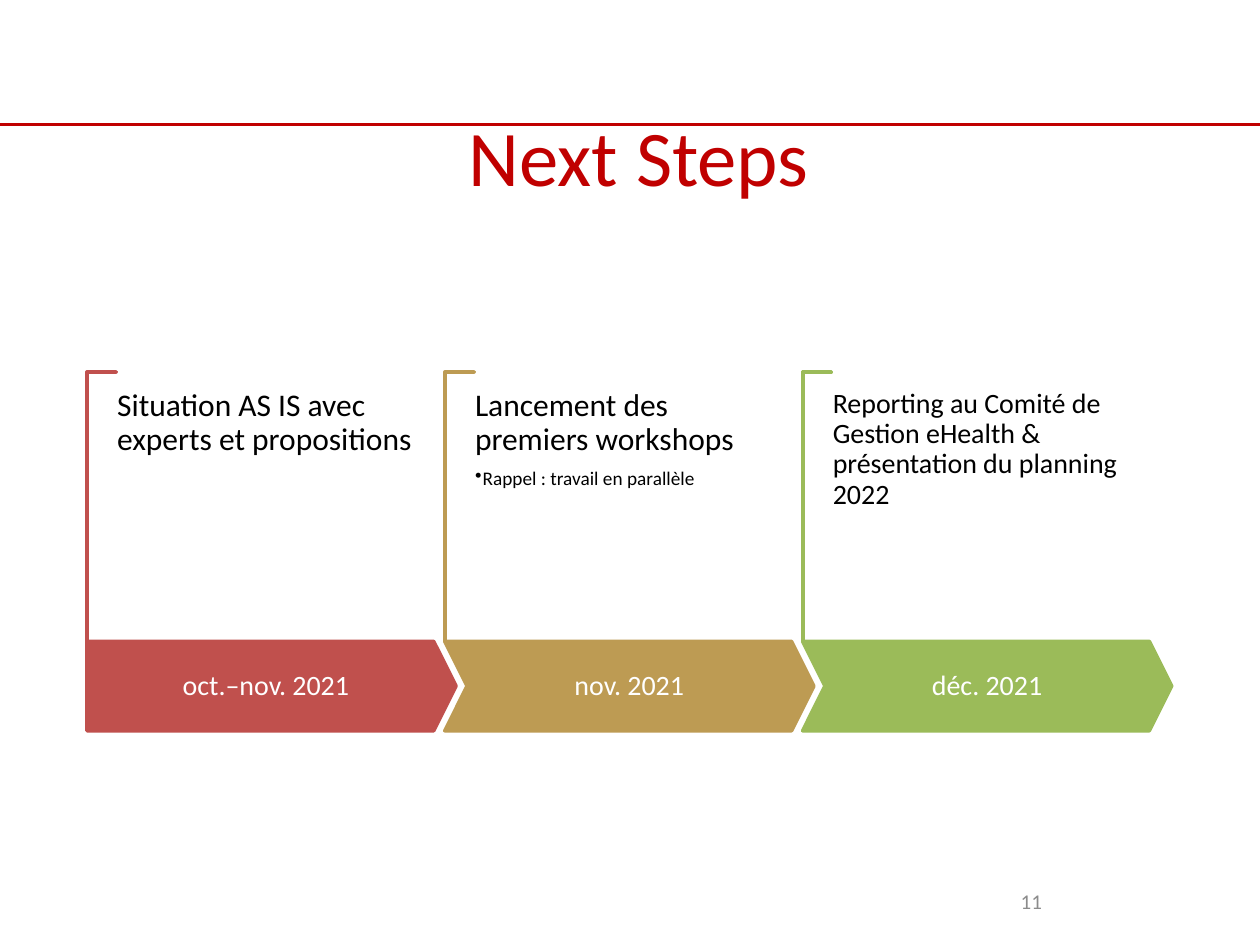
from dataclasses import dataclass

from lxml import etree
from pptx import Presentation
from pptx.dml.color import RGBColor
from pptx.enum import shapes, text
from pptx.oxml import ns
from pptx.util import Inches, Pt


@dataclass(frozen=True)
class Theme:
    font: str = "Calibri"
    accent: str = "C00000"
    body: str = "000000"
    light: str = "FFFFFF"
    muted: str = "8C8C8C"
    title_size: int = 45
    label_size: int = 16
    bullet_size: int = 11
    number_size: int = 12


THEME = Theme()

# Content
TITLE = "Next Steps"
PAGE_NUMBER = "11"
STEPS = [
    dict(date="oct.–nov. 2021", color="C0504D", size=18,
         heading="Situation AS IS avec experts et propositions", bullets=[]),
    dict(date="nov. 2021", color="BD9B53", size=18,
         heading="Lancement des premiers workshops",
         bullets=["Rappel : travail en parallèle"]),
    dict(date="déc. 2021", color="9BBB59", size=16,
         heading="Reporting au Comité de Gestion eHealth & présentation du planning 2022",
         bullets=[]),
]

# Timeline geometry in inches
LEFT, PITCH = 0.69, 2.84
ARROW_TOP, ARROW_WIDTH, ARROW_HEIGHT = 5.09, 2.93, 0.71
BRACKET_TOP, BRACKET_LENGTH, BRACKET_DEPTH = 2.95, 2.14, 0.23
TEXT_OFFSET, TEXT_TOP, TEXT_WIDTH, TEXT_HEIGHT = 0.24, 3.09, 2.38, 1.59


def rgb(color):
    return RGBColor.from_string(color)


def style(paragraph, size, color, align=text.PP_ALIGN.LEFT):
    paragraph.alignment = align
    paragraph.font.name = THEME.font
    paragraph.font.size = Pt(size)
    paragraph.font.color.rgb = rgb(color)


def set_insets(frame, horizontal, vertical):
    frame.margin_left = frame.margin_right = Inches(horizontal)
    frame.margin_top = frame.margin_bottom = Inches(vertical)


def add_text(slide, box, words, size, color, align=text.PP_ALIGN.CENTER,
             anchor=text.MSO_ANCHOR.MIDDLE):
    frame = slide.shapes.add_textbox(*map(Inches, box)).text_frame
    frame.word_wrap = True
    frame.vertical_anchor = anchor
    frame.text = words
    style(frame.paragraphs[0], size, color, align)
    return frame


def add_shape(slide, kind, box, fill, line, adjustments):
    shape = slide.shapes.add_shape(kind, *map(Inches, box))
    shape.shadow.inherit = False
    shape.fill.solid()
    shape.fill.fore_color.rgb = rgb(fill)
    shape.line.color.rgb = rgb(line)
    shape.line.width = Pt(2)
    for index, value in enumerate(adjustments):
        shape.adjustments[index] = value
    return shape


def add_bullet(frame, words):
    paragraph = frame.add_paragraph()
    paragraph.text = words
    properties = paragraph._p.get_or_add_pPr()
    properties.set("marL", str(Inches(0.06)))
    properties.set("indent", str(Inches(-0.06)))
    etree.SubElement(properties, ns.qn("a:buChar")).set("char", "•")
    style(paragraph, THEME.bullet_size, THEME.body)
    paragraph.line_spacing = 0.9


def add_step(slide, index, step):
    left = LEFT + index * PITCH

    # Bracket: an L turned a quarter about its centre
    center_x = left + BRACKET_DEPTH / 2
    center_y = BRACKET_TOP + BRACKET_LENGTH / 2
    bracket = add_shape(
        slide, shapes.MSO_SHAPE.CORNER,
        (center_x - BRACKET_LENGTH / 2, center_y - BRACKET_DEPTH / 2,
         BRACKET_LENGTH, BRACKET_DEPTH),
        THEME.light, step["color"], (0.01, 0.01))
    bracket.rotation = 90

    # Date arrow
    kind = shapes.MSO_SHAPE.CHEVRON if index else shapes.MSO_SHAPE.PENTAGON
    arrow = add_shape(slide, kind, (left, ARROW_TOP, ARROW_WIDTH, ARROW_HEIGHT),
                      step["color"], step["color"], (0.25,))
    frame = arrow.text_frame
    frame.word_wrap = True
    frame.vertical_anchor = text.MSO_ANCHOR.MIDDLE
    set_insets(frame, 0.11, 0.22)
    frame.text = step["date"]
    label = frame.paragraphs[0]
    style(label, THEME.label_size, THEME.light, text.PP_ALIGN.CENTER)
    label.line_spacing = 0.9

    # Description
    frame = add_text(slide, (left + TEXT_OFFSET, TEXT_TOP, TEXT_WIDTH, TEXT_HEIGHT),
                     step["heading"], step["size"], THEME.body,
                     text.PP_ALIGN.LEFT, text.MSO_ANCHOR.TOP)
    set_insets(frame, 0, 0)
    heading = frame.paragraphs[0]
    heading.line_spacing = 0.9
    heading.space_after = Pt(0.35 * step["size"])
    for words in step["bullets"]:
        add_bullet(frame, words)


def main():
    presentation = Presentation()
    presentation.slide_width, presentation.slide_height = Inches(10), Inches(7.5)
    slide = presentation.slides.add_slide(presentation.slide_layouts[6])

    # Header rule
    rule = slide.shapes.add_connector(shapes.MSO_CONNECTOR.STRAIGHT, Inches(0),
                                      Inches(0.99), Inches(10), Inches(0.99))
    rule.line.color.rgb = rgb(THEME.accent)
    rule.line.width = Pt(1.5)
    etree.SubElement(rule._element.spPr, ns.qn("a:effectLst"))

    # Title and page number
    add_text(slide, (0.76, 0.61, 8.62, 1.24), TITLE, THEME.title_size, THEME.accent)
    add_text(slide, (7.06, 6.95, 2.25, 0.4), PAGE_NUMBER, THEME.number_size, THEME.muted)

    # Timeline
    for index, step in enumerate(STEPS):
        add_step(slide, index, step)

    presentation.save("out.pptx")


if __name__ == "__main__":
    main()
